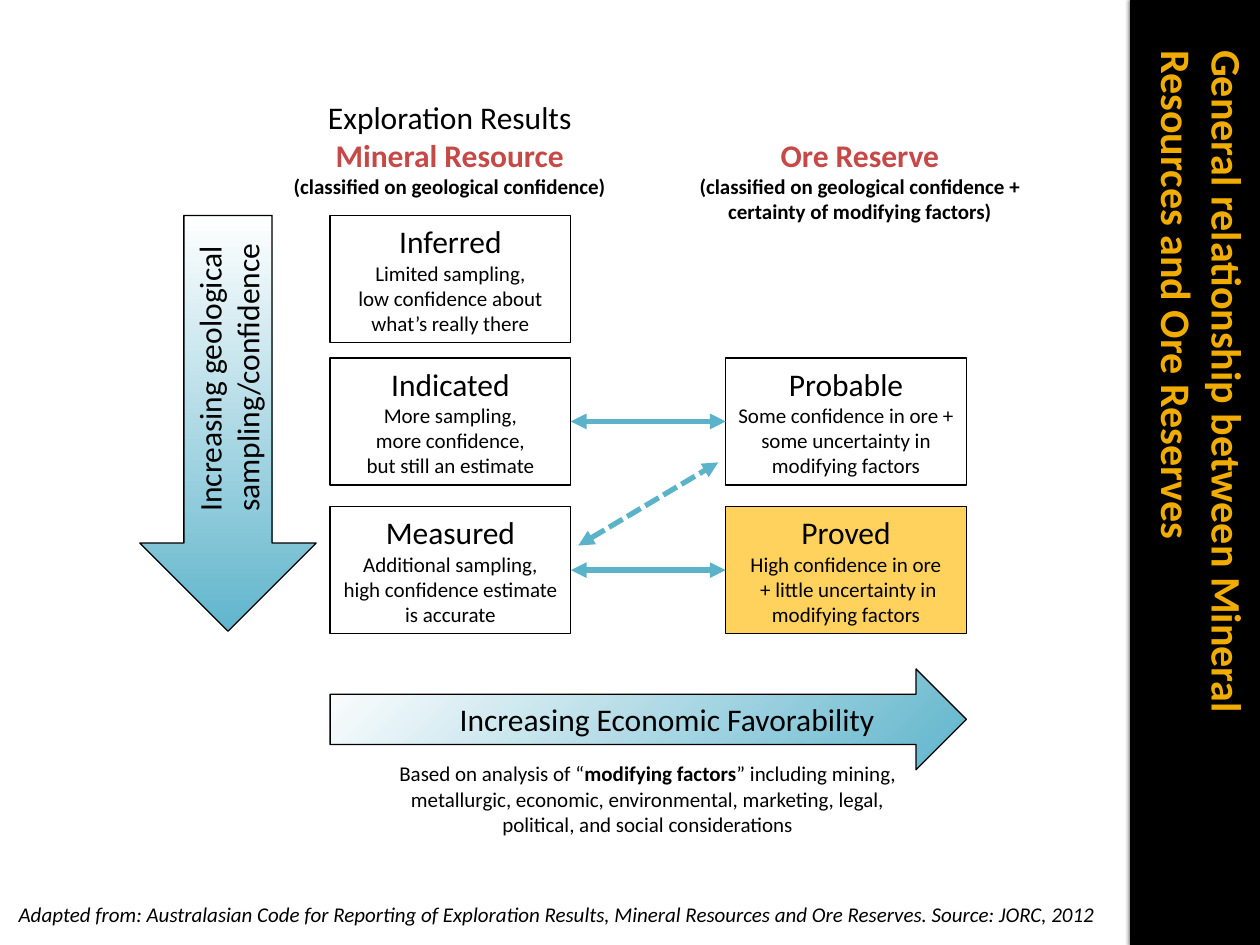
"""Build a slide on how mineral resources relate to ore reserves."""
from lxml.etree import SubElement
from pptx import Presentation
from pptx.dml.color import RGBColor
from pptx.enum.dml import MSO_LINE as Dash
from pptx.enum.shapes import MSO_CONNECTOR as Link, MSO_SHAPE as Shape
from pptx.enum.text import MSO_ANCHOR as Anchor, PP_ALIGN as Align
from pptx.oxml import parse_xml
from pptx.oxml.ns import nsdecls, qn
from pptx.util import Inches, Pt

COLORS = {"black": "000000", "white": "FFFFFF", "gold": "FFD25D", "title": "F0AD00",
          "red": "C64847", "teal": "60B5CC", "link": "5BB3CA"}

TITLE = "General relationship between Mineral Resources and Ore Reserves"
SOURCE = ("Adapted from: Australasian Code for Reporting of Exploration Results, "
          "Mineral Resources and Ore Reserves. Source: JORC, 2012")
FACTORS = [("Based on analysis of “", False), ("modifying factors", True),
           ("” including mining, metallurgic, economic, environmental, marketing, legal, "
            "political, and social considerations", False)]
HEADINGS = [
    ((2.12, 0.73, 2.9, 0.91), "Exploration Results", "Mineral Resource",
     "(classified on geological confidence)"),
    ((5.44, 1.03, 2.77, 0.81), None, "Ore Reserve",
     "(classified on geological confidence + certainty of modifying factors)"),
]
RESOURCE_X, RESERVE_X = 2.62, 5.76
ROW_TOPS = [1.71, 2.84, 4.02]
BOX_WIDTH, BOX_HEIGHT = 1.91, 1.01
CATEGORIES = [
    (RESOURCE_X, 0, None, "Inferred",
     ["Limited sampling,", "low confidence about what’s really there"]),
    (RESOURCE_X, 1, None, "Indicated",
     ["More sampling,", "more confidence,", "but still an estimate"]),
    (RESERVE_X, 1, None, "Probable",
     ["Some confidence in ore + some uncertainty in modifying factors"]),
    (RESOURCE_X, 2, None, "Measured",
     ["Additional sampling, high confidence estimate is accurate"]),
    (RESERVE_X, 2, "gold", "Proved",
     ["High confidence in ore", " + little uncertainty in modifying factors"]),
]
LINKS = [(row, RESOURCE_X + BOX_WIDTH, ROW_TOPS[row] + BOX_HEIGHT / 2,
          RESERVE_X, ROW_TOPS[row] + BOX_HEIGHT / 2) for row in (1, 2)]
LINKS.append((None, 4.59, 4.33, 5.7, 3.67))

deck = Presentation()
deck.slide_width, deck.slide_height = Inches(10), Inches(7.5)
slide = deck.slides.add_slide(deck.slide_layouts[6])


def rgb(name):
    return RGBColor.from_string(COLORS[name])


def write(frame, text, new=True, size=12, color="black", bold=False, italic=False,
          align=Align.CENTER, indent=0):
    """Append a run, in a new paragraph unless told otherwise."""
    frame.word_wrap = True
    paragraph = frame.paragraphs[-1]
    if new and paragraph.runs:
        paragraph = frame.add_paragraph()
    paragraph.alignment = align
    if indent:
        paragraph._p.get_or_add_pPr().set("marL", str(Inches(indent)))
    run = paragraph.add_run()
    run.text = text
    font = run.font
    font.name, font.size, font.bold, font.italic = "Calibri", Pt(size), bold, italic
    font.color.rgb = rgb(color)


def add_text_box(area):
    return slide.shapes.add_textbox(*map(Inches, area)).text_frame


def add_block(kind, area, fill=None, outlined=True):
    block = slide.shapes.add_shape(kind, *map(Inches, area))
    block.shadow.inherit = False
    if fill:
        block.fill.solid()
        block.fill.fore_color.rgb = rgb(fill)
    else:
        block.fill.background()
    if outlined:
        block.line.color.rgb = rgb("black")
        block.line.width = Pt(0.75)
    else:
        block.line.fill.background()
    block.text_frame.vertical_anchor = Anchor.MIDDLE
    return block


def add_fading_arrow(kind, area, direction, text, align):
    arrow = add_block(kind, area)
    properties = arrow._element.spPr
    gradient = parse_xml(
        f'<a:gradFill {nsdecls("a")} rotWithShape="1"><a:gsLst>'
        f'<a:gs pos="0"><a:srgbClr val="{COLORS["teal"]}"/></a:gs>'
        f'<a:gs pos="100000"><a:srgbClr val="{COLORS["white"]}"/></a:gs>'
        f'</a:gsLst>{direction}</a:gradFill>')
    properties.replace(properties.find(qn("a:noFill")), gradient)
    write(arrow.text_frame, text, size=18, align=align, indent=0.5)
    return arrow


def add_link(x1, y1, x2, y2, dashed):
    link = slide.shapes.add_connector(Link.STRAIGHT, *map(Inches, (x1, y1, x2, y2)))
    link.line.color.rgb = rgb("link")
    link.line.width = Pt(3)
    if dashed:
        link.line.dash_style = Dash.SQUARE_DOT
    for end in ("a:headEnd", "a:tailEnd"):
        SubElement(link.line._get_or_add_ln(), qn(end), type="triangle")
    SubElement(link._element.spPr, qn("a:effectLst"))


edge = add_block(Shape.RECTANGLE, (8.97, 0, 0.05, 7.5), "white", outlined=False)
edge._element.spPr.find(qn("a:effectLst")).append(parse_xml(
    f'<a:outerShdw {nsdecls("a")} blurRad="{Pt(2.5)}" dist="{Pt(0.8)}" dir="10800000">'
    f'<a:srgbClr val="{COLORS["black"]}"><a:alpha val="60000"/></a:srgbClr></a:outerShdw>'))
add_block(Shape.RECTANGLE, (8.97, 0, 1.05, 7.5), "black", outlined=False)

for left, row, fill, name, details in CATEGORIES:
    box = add_block(Shape.RECTANGLE, (left, ROW_TOPS[row], BOX_WIDTH, BOX_HEIGHT), fill)
    write(box.text_frame, name, size=18)
    for detail in details:
        write(box.text_frame, detail)

add_fading_arrow(
    Shape.RIGHT_ARROW, (RESOURCE_X, 5.31, 5.05, 0.8),
    '<a:path path="circle"><a:fillToRect l="100000" t="100000"/></a:path>',
    "Increasing Economic Favorability", Align.CENTER)
confidence = add_fading_arrow(
    Shape.LEFT_ARROW, (0.16, 2.66, 3.3, 1.4), '<a:lin ang="0" scaled="0"/>',
    "Increasing geological sampling/confidence", Align.LEFT)
confidence.rotation = 270

for area, lead, heading, basis in HEADINGS:
    frame = add_text_box(area)
    if lead:
        write(frame, lead, size=18)
    write(frame, heading, size=18, color="red", bold=True)
    write(frame, basis, bold=True)

factors = add_text_box((2.92, 5.99, 4.44, 0.71))
for text, bold in FACTORS:
    write(factors, text, new=False, bold=bold)

for row, x1, y1, x2, y2 in LINKS:
    add_link(x1, y1, x2, y2, dashed=row is None)

write(add_text_box((0.05, 7.11, 9.23, 0.3)), SOURCE, italic=True, align=Align.LEFT)

title = add_text_box((9.21, 0.3, 0.68, 6.4))
title.vertical_anchor = Anchor.MIDDLE
title.margin_right = Inches(0.05)
title._txBody.bodyPr.set("vert", "eaVert")
write(title, TITLE, size=24, color="title", bold=True, align=Align.LEFT)

deck.save("out.pptx")
